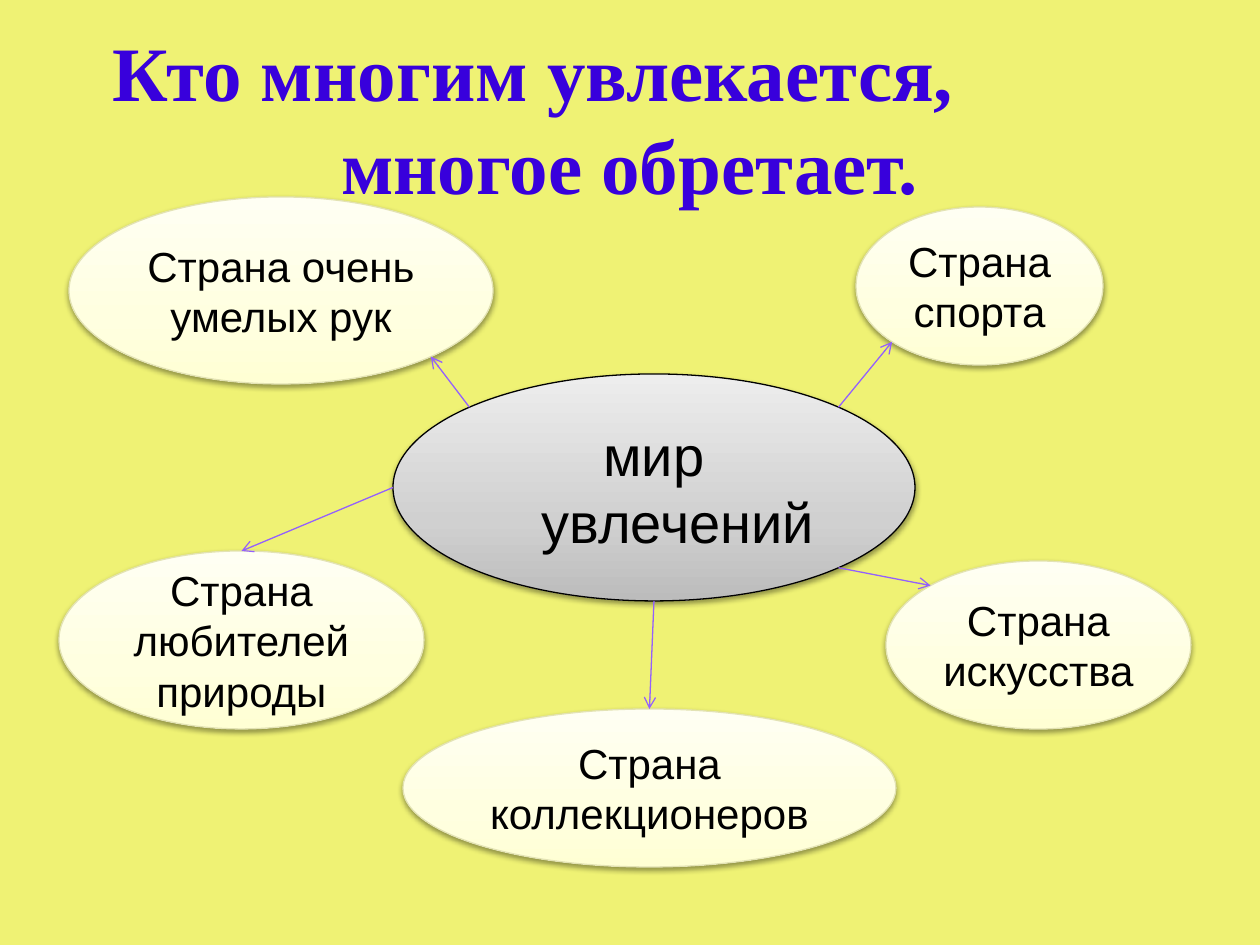
import math

from lxml import etree
from pptx import Presentation
from pptx import util as u
from pptx.dml.color import RGBColor
from pptx.enum import shapes, text
from pptx.oxml.ns import qn

SCALE = 914400 // 126  # EMU in one px

CREAM = [(0, "FFFFF3"), (65, "FFFFE0"), (100, "FFFFD4")]
GREY = [(0, "EDEDED"), (65, "D0D0D0"), (100, "BCBCBC")]

CENTRE = (393, 374, 522, 227)
# Text, box, direction of the arrow start on the centre, and of its end here
# (degrees clockwise from the right)
COUNTRIES = [
    ("Страна очень умелых рук", (69, 197, 424, 187), 225, 45),
    ("Страна спорта", (856, 207, 247, 158), 315, 135),
    ("Страна любителей природы", (59, 551, 365, 178), 180, 270),
    ("Страна коллекционеров", (403, 709, 493, 158), 90, 270),
    ("Страна искусства", (886, 561, 305, 168), 45, 225),
]


def px(value):
    return u.Emu(round(value * SCALE))


def color(value):
    return RGBColor.from_string(value)


def add_run(paragraph, content, size, font="Arial", fill="000000", bold=False):
    run = paragraph.add_run()
    run.text = content
    run.font.name = font
    run.font.size = u.Pt(size)
    run.font.bold = bold
    run.font.color.rgb = color(fill)


def set_gradient(shape, stops):
    """Vertical gradient, stops listed from top to bottom."""
    shape.fill.gradient()
    shape.fill.gradient_angle = 270
    stop_list = shape._element.spPr.find(qn("a:gradFill")).find(qn("a:gsLst"))
    for old in list(stop_list):
        stop_list.remove(old)
    for position, value in stops:
        stop = etree.SubElement(stop_list, qn("a:gs"), pos=str(position * 1000))
        etree.SubElement(stop, qn("a:srgbClr"), val=value)


def set_shadow(shape):
    shape.shadow.inherit = False
    effects = shape._element.spPr.find(qn("a:effectLst"))
    shadow = etree.SubElement(
        effects, qn("a:outerShdw"), blurRad=str(u.Pt(3.1)), dist=str(u.Pt(1.6)),
        dir="5400000", rotWithShape="0")
    shade = etree.SubElement(shadow, qn("a:srgbClr"), val="000000")
    etree.SubElement(shade, qn("a:alpha"), val="38000")


def add_ellipse(slide, box, content, size, stops, line):
    shape = slide.shapes.add_shape(shapes.MSO_SHAPE.OVAL, *map(px, box))
    set_gradient(shape, stops)
    shape.line.color.rgb = color(line)
    shape.line.width = u.Pt(0.75)
    set_shadow(shape)
    frame = shape.text_frame
    frame.word_wrap = True
    frame.vertical_anchor = text.MSO_ANCHOR.MIDDLE
    paragraph = frame.paragraphs[0]
    paragraph.alignment = text.PP_ALIGN.CENTER
    add_run(paragraph, content, size)
    return shape


def edge_point(box, degrees):
    left, top, width, height = box
    angle = math.radians(degrees)
    return (px(left + width / 2 * (1 + math.cos(angle))),
            px(top + height / 2 * (1 + math.sin(angle))))


def add_arrow(slide, start, end):
    arrow = slide.shapes.add_connector(
        shapes.MSO_CONNECTOR.STRAIGHT, *start, *end)
    arrow.line.color.rgb = color("9460FD")
    arrow.line.width = u.Pt(0.75)
    etree.SubElement(arrow.line._get_or_add_ln(), qn("a:tailEnd"), type="arrow")
    etree.SubElement(arrow._element.spPr, qn("a:effectLst"))


def add_title(slide):
    frame = slide.shapes.add_textbox(px(63), px(38), px(1134), px(158)).text_frame
    frame.word_wrap = True
    frame.vertical_anchor = text.MSO_ANCHOR.MIDDLE
    first, second = frame.paragraphs[0], frame.add_paragraph()
    # The first line is set off to the left of the centred second one
    first.alignment = text.PP_ALIGN.LEFT
    first._p.get_or_add_pPr().set("marL", str(px(37)))
    second.alignment = text.PP_ALIGN.CENTER
    for paragraph, line in ((first, "Кто многим увлекается,"),
                            (second, "многое обретает.")):
        add_run(paragraph, line, 44, "Times New Roman", "3800DC", True)


def main():
    presentation = Presentation()
    presentation.slide_width, presentation.slide_height = px(1260), px(945)
    slide = presentation.slides.add_slide(presentation.slide_layouts[6])
    slide.background.fill.solid()
    slide.background.fill.fore_color.rgb = color("EFF274")

    add_title(slide)

    # Centre, with a hanging indent
    centre = add_ellipse(slide, CENTRE, "мир увлечений", 32, GREY, "000000")
    properties = centre.text_frame.paragraphs[0]._p.get_or_add_pPr()
    properties.set("marL", str(px(48)))
    properties.set("indent", str(px(-48)))

    # Countries around it, each with its arrow
    for content, box, _, _ in COUNTRIES:
        add_ellipse(slide, box, content, 24, CREAM, "E3E3B4")
    for _, box, start, end in COUNTRIES:
        add_arrow(slide, edge_point(CENTRE, start), edge_point(box, end))

    presentation.save("out.pptx")


if __name__ == "__main__":
    main()
